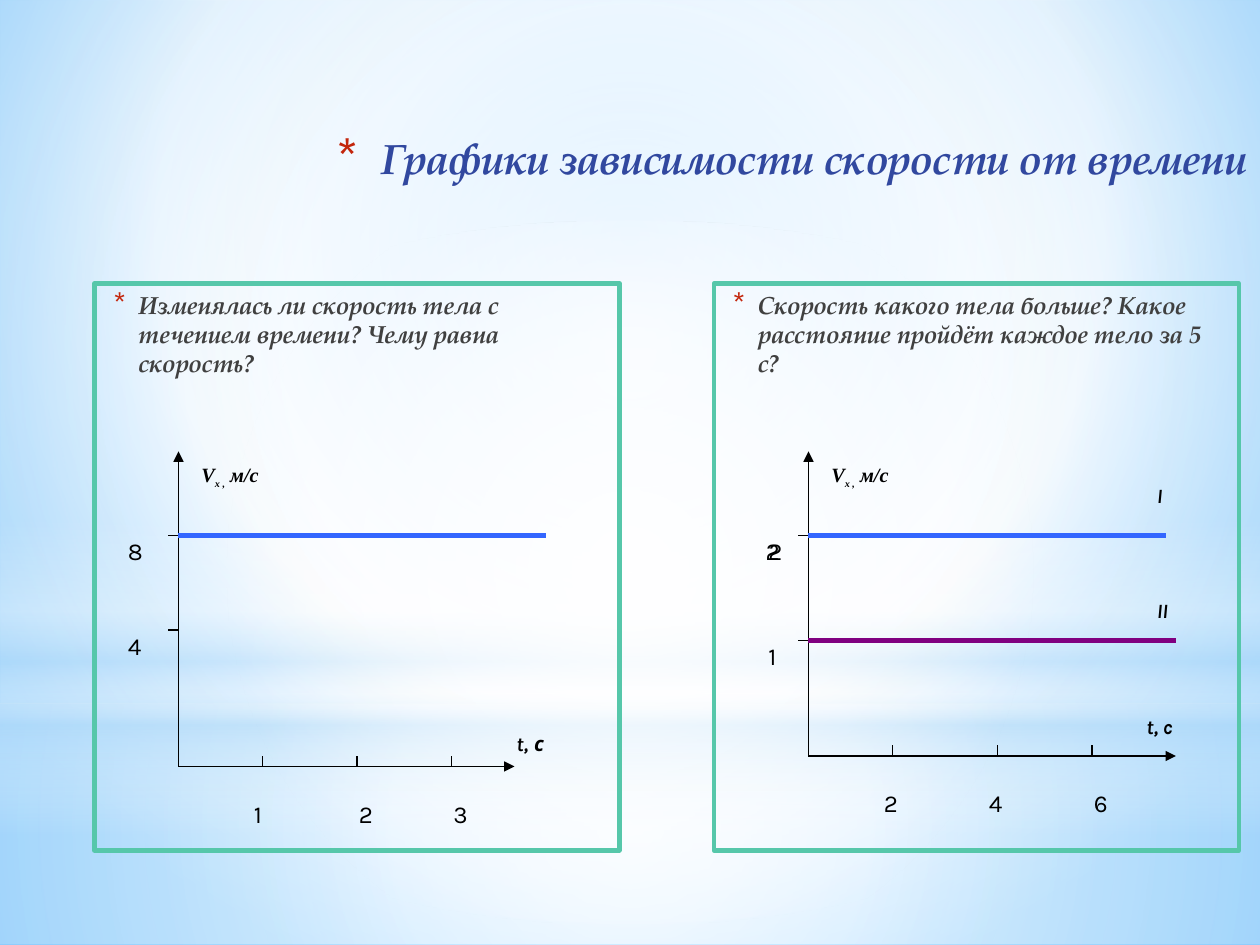
from pptx import Presentation
from pptx.dml.color import RGBColor
from pptx.enum.shapes import MSO_CONNECTOR, MSO_SHAPE
from pptx.enum.text import MSO_ANCHOR, MSO_AUTO_SIZE, PP_ALIGN
from pptx.oxml.ns import qn
from pptx.util import Pt
from lxml.etree import SubElement

COLORS = {
    "white": "FFFFFF", "sky": "9ED5FF", "deep_sky": "5BB9FF", "haze": "B4DCFA",
    "title": "31489F", "body": "404040", "bullet": "C3260C", "frame": "56C7AA",
    "black": "000000", "blue": "3366FF", "purple": "800080",
}
TITLE_FONT, LABEL_FONT, UNIT_FONT = "TeX Gyre Pagella", "Karla", "Times New Roman"


def set_gradient(fill, element, stops, center=None):
    """Stops are (position, color, opacity); without a center it runs downwards."""
    fill.gradient()
    gradient = element.find(".//" + qn("a:gradFill"))
    gradient.clear()
    gradient.set("rotWithShape", "1")
    stop_list = SubElement(gradient, qn("a:gsLst"))
    for position, color, opacity in stops:
        stop = SubElement(stop_list, qn("a:gs"), pos=str(position * 1000))
        tint = SubElement(stop, qn("a:srgbClr"), val=COLORS[color])
        if opacity < 100:
            SubElement(tint, qn("a:alpha"), val=str(opacity * 1000))
    if center:
        circle = SubElement(gradient, qn("a:path"), path="circle")
        sides = {side: str(value * 1000) for side, value in zip("ltrb", center)}
        SubElement(circle, qn("a:fillToRect"), **sides)
    else:
        SubElement(gradient, qn("a:lin"), ang="5400000", scaled="0")


def write_text(shape, runs, font, color, before=0, bullet=None, baseline=0):
    """Runs are (text, size, bold italic); bullet is (indent, hanging, percent)."""
    frame = shape.text_frame
    frame.word_wrap = True
    frame.vertical_anchor = MSO_ANCHOR.TOP
    paragraph = frame.paragraphs[0]
    paragraph.alignment = PP_ALIGN.LEFT
    properties = paragraph._p.get_or_add_pPr()
    if before:
        paragraph.space_before = Pt(0)
        spacing = properties.find(qn("a:spcBef"))
        spacing.clear()
        SubElement(spacing, qn("a:spcPct"), val=str(before * 1000))
    if bullet:
        indent, hanging, percent = bullet
        paragraph.space_after = Pt(3)
        properties.set("marL", str(Pt(indent)))
        properties.set("indent", str(-Pt(hanging)))
        bullet_color = SubElement(properties, qn("a:buClr"))
        SubElement(bullet_color, qn("a:srgbClr"), val=COLORS["bullet"])
        SubElement(properties, qn("a:buSzPct"), val=str(percent * 1000))
        SubElement(properties, qn("a:buFont"), typeface=LABEL_FONT)
        SubElement(properties, qn("a:buChar"), char="*")
    for text, size, strong in runs:
        run = paragraph.add_run()
        run.text = text
        run.font.name = font
        run.font.size = Pt(size)
        run.font.bold = run.font.italic = strong
        run.font.color.rgb = RGBColor.from_string(COLORS[color])
        if baseline:
            run.font._element.set("baseline", str(baseline * 1000))


presentation = Presentation()
presentation.slide_width, presentation.slide_height = Pt(720), Pt(540)
slide = presentation.slides.add_slide(presentation.slide_layouts[6])
shapes = slide.shapes

# Background with soft light layers
set_gradient(slide.background.fill, slide.element,
             [(0, "sky", 100), (60, "white", 100), (100, "deep_sky", 100)],
             (20, 10, 20, 60))
MIDDLE = (50, 50, 50, 50)
light_layers = [
    (MSO_SHAPE.RECTANGLE, 402, 138, MIDDLE,
     [(0, "white", 91), (37, "white", 76), (100, "haze", 79)]),
    (MSO_SHAPE.RECTANGLE, 0, 402, MIDDLE,
     [(0, "white", 89), (48, "white", 62), (100, "haze", 79)]),
    (MSO_SHAPE.RECTANGLE, 297, 180, None,
     [(0, "white", 0), (29, "white", 30), (45, "haze", 40),
      (55, "white", 26), (65, "haze", 60), (100, "white", 0)]),
    (MSO_SHAPE.OVAL, 126, 402, MIDDLE, [(0, "white", 100), (56, "white", 0)]),
]
for kind, top, height, center, stops in light_layers:
    layer = shapes.add_shape(kind, Pt(0), Pt(top), Pt(720), Pt(height))
    layer.shadow.inherit = False
    layer.line.fill.background()
    set_gradient(layer.fill, layer.element, stops, center)

# Title
title = shapes.add_textbox(Pt(106.5), Pt(72), Pt(613.5), Pt(67))
write_text(title, [("Графики зависимости скорости от времени", 24, True)],
           TITLE_FONT, "title", bullet=(25, 25, 128))
title.text_frame.paragraphs[0].alignment = PP_ALIGN.RIGHT

# Framed questions
questions = [
    (54, "Изменялась ли скорость тела с течением времени? Чему равна скорость?"),
    (408, "Скорость какого тела больше? Какое расстояние пройдёт каждое тело за 5 с?"),
]
for left, question in questions:
    panel = shapes.add_shape(MSO_SHAPE.RECTANGLE, Pt(left), Pt(162), Pt(300), Pt(324))
    panel.shadow.inherit = False
    panel.fill.background()
    panel.line.color.rgb = RGBColor.from_string(COLORS["frame"])
    panel.line.width = Pt(2.5)
    write_text(panel, [(question, 14, True)], TITLE_FONT, "body",
               before=20, bullet=(18, 14.5, 130))

# Graphs: axes start at (x, y); speeds are (tick y, line end, color)
graphs = [
    {"x": 102, "y": 438, "end": 294, "ticks": (150, 204, 258), "tick_ends": (432, 438),
     "speeds": [(360, None, None), (306, 312, "blue")]},
    {"x": 462, "y": 432, "end": 672, "ticks": (510, 570, 624), "tick_ends": (432, 426),
     "speeds": [(366, 672, "purple"), (306, 666, "blue")]},
]
lines = []
for graph in graphs:
    x, y = graph["x"], graph["y"]
    lines.append((x, y, x, 258, "black", 0.75, True))
    lines.append((x, y, graph["end"], y, "black", 0.75, True))
    start, stop = graph["tick_ends"]
    for tick in graph["ticks"]:
        lines.append((tick, start, tick, stop, "black", 0.75, False))
    for level, end, color in graph["speeds"]:
        lines.append((x, level, x - 6, level, "black", 0.75, False))
        if color:
            lines.append((x, level, end, level, color, 2.5, False))

for x1, y1, x2, y2, color, width, arrow in lines:
    line = shapes.add_connector(MSO_CONNECTOR.STRAIGHT, Pt(x1), Pt(y1), Pt(x2), Pt(y2))
    line.line.color.rgb = RGBColor.from_string(COLORS[color])
    line.line.width = Pt(width)
    if arrow:
        SubElement(line.line._get_or_add_ln(), qn("a:tailEnd"), type="triangle")
    SubElement(line.element.spPr, qn("a:effectLst"))

# Labels: left, top, width, runs, font
labels = [
    (288, 408, 60, [("t,", 20, True), (" ", 24, False), ("с", 20, True)], LABEL_FONT),
    (648, 402, 72, [("t, c", 20, True)], LABEL_FONT),
    (654, 270, 36, [("I", 20, True)], LABEL_FONT),
    (654, 336, 42, [("II", 20, True)], LABEL_FONT),
]
for left, width in [(108, 84), (468, 66)]:
    speed_unit = [("V", 20, True), ("x ,", 10, True), (" м/с", 20, True)]
    labels.append((left, 258, width, speed_unit, UNIT_FONT))
numbers = [
    ("1", 138, 450, 24), ("2", 198, 450, 30), ("3", 252, 450, 30),
    ("4", 66, 354, 24), ("8", 66, 300, 24),
    ("2", 498, 444, 30), ("4", 558, 444, 30), ("6", 618, 444, 30),
    ("1", 432, 360, 24), ("2", 430.5, 300, 14.5), ("2", 432, 300, 24),
]
for number, left, top, width in numbers:
    labels.append((left, top, width, [(number, 24, False)], LABEL_FONT))

for left, top, width, runs, font in labels:
    height = 26.5 if any(size == 24 for _, size, _ in runs) else 23
    label = shapes.add_textbox(Pt(left), Pt(top), Pt(width), Pt(height))
    write_text(label, runs, font, "black", before=50, baseline=30)
    label.text_frame.auto_size = MSO_AUTO_SIZE.SHAPE_TO_FIT_TEXT

presentation.save("out.pptx")
